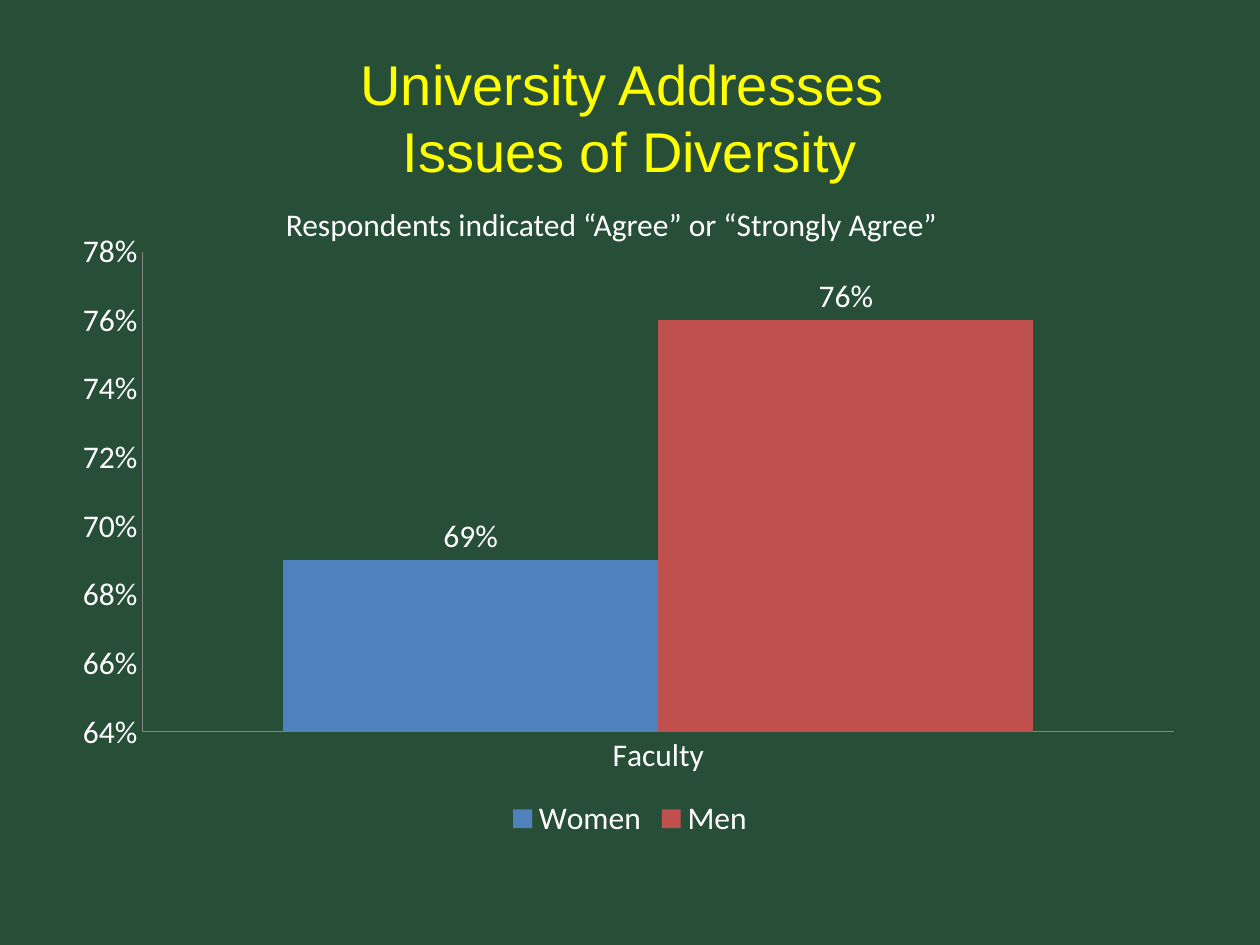
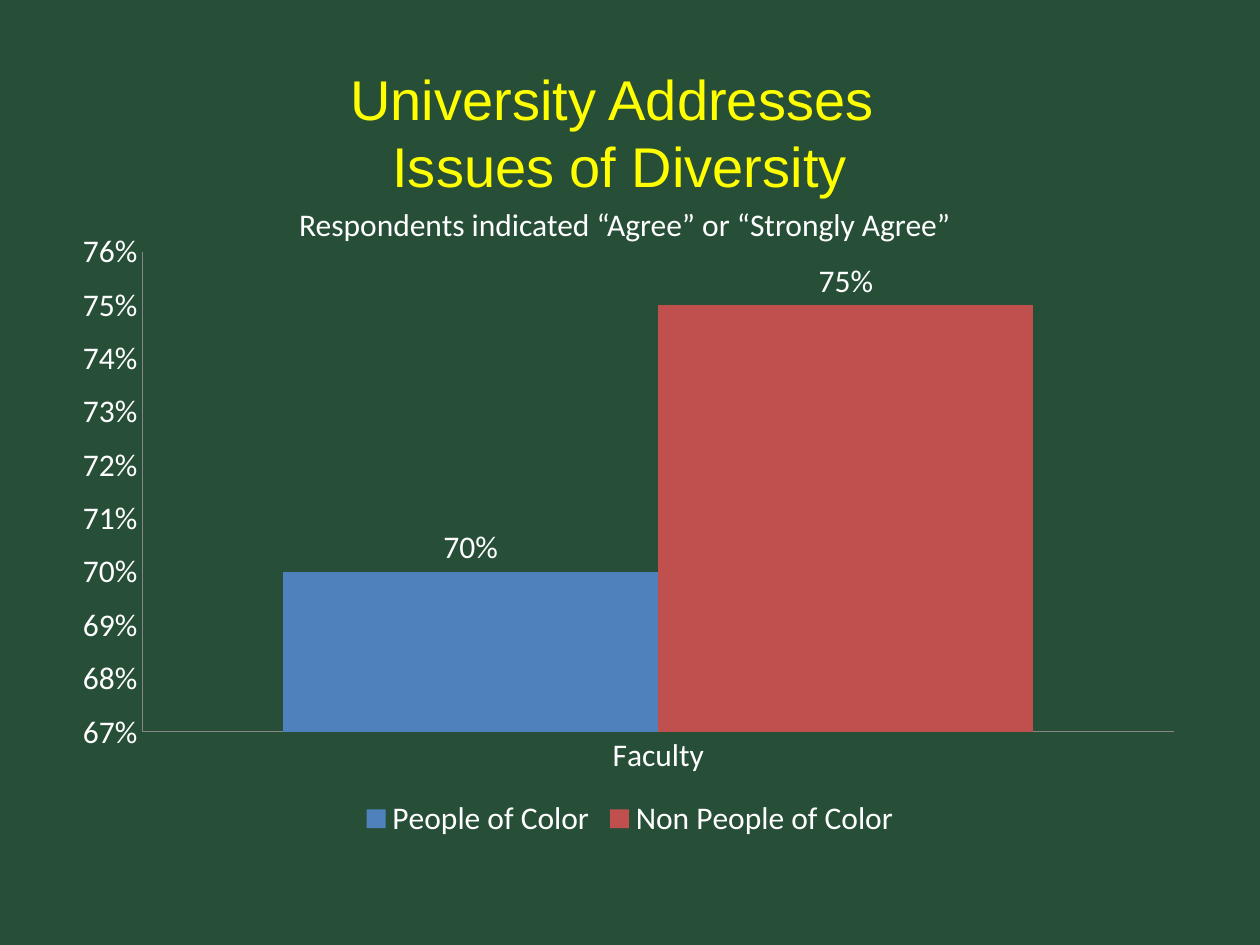
from copy import deepcopy
from dataclasses import dataclass

from lxml import etree
from pptx import Presentation
from pptx.chart.axis import CategoryAxis, ValueAxis
from pptx.chart.chart import Chart
from pptx.chart.data import CategoryChartData
from pptx.dml.color import RGBColor
from pptx.enum.chart import (XL_CHART_TYPE, XL_LABEL_POSITION,
                             XL_LEGEND_POSITION, XL_TICK_MARK)
from pptx.enum.text import MSO_ANCHOR, MSO_AUTO_SIZE, PP_ALIGN
from pptx.oxml import parse_xml
from pptx.oxml.ns import nsdecls, qn
from pptx.slide import Slide
from pptx.text.text import Font
from pptx.util import Pt

COLUMNS = XL_CHART_TYPE.COLUMN_CLUSTERED
OUTSIDE_END = XL_LABEL_POSITION.OUTSIDE_END
LEGEND_BOTTOM = XL_LEGEND_POSITION.BOTTOM
NO_TICK = XL_TICK_MARK.NONE
MIDDLE = MSO_ANCHOR.MIDDLE
GROW = MSO_AUTO_SIZE.SHAPE_TO_FIT_TEXT
LEFT, CENTER = PP_ALIGN.LEFT, PP_ALIGN.CENTER

# Shared look
GREEN, YELLOW, WHITE, GRAY = "274E37", "FFFF00", "FFFFFF", "868686"
SERIES_COLORS = ("4F81BD", "C0504D")
TITLE_FONT, BODY_FONT = "Arial", "Calibri"
TITLE_SIZE, BODY_SIZE = 32, 18
PERCENT = "0%"
TITLE = "University Addresses \vIssues of Diversity"
SUBTITLE = "Respondents indicated “Agree” or “Strongly Agree”"
TITLE_ONLY_LAYOUT = 5


@dataclass(frozen=True)
class Frame:
    left: float
    top: float
    width: float
    height: float

    def lengths(self) -> tuple[Pt, Pt, Pt, Pt]:
        return Pt(self.left), Pt(self.top), Pt(self.width), Pt(self.height)


@dataclass(frozen=True)
class SurveyPage:
    title_frame: Frame
    subtitle_frame: Frame
    subtitle_align: PP_ALIGN
    results: dict[str, float]
    axis_range: tuple[float, float]
    axis_step: float


CHART_FRAME = Frame(36, 126, 648, 356.4)
# Plot area as fractions of the chart frame
PLOT_AREA = {"x": 0.07, "y": 0.05, "w": 0.91, "h": 0.77}

PAGES = (
    SurveyPage(Frame(36, 21.6, 648, 90), Frame(156.24, 113.76, 419.76, 51.12),
               LEFT, {"Women": 0.69, "Men": 0.76}, (0.64, 0.78), 0.02),
    SurveyPage(Frame(30.24, 30.24, 648, 90), Frame(138.24, 113.76, 437.76, 30.24),
               CENTER, {"People of Color": 0.7, "Non People of Color": 0.75},
               (0.67, 0.76), 0.01),
)


def rgb(color: str) -> RGBColor:
    return RGBColor.from_string(color)


def style_font(font: Font, name: str, size: float, color: str) -> None:
    font.name = name
    font.size = Pt(size)
    font.color.rgb = rgb(color)


def add_title(page: Slide, frame: Frame) -> None:
    title = page.shapes.title
    title.left, title.top, title.width, title.height = frame.lengths()
    title.text_frame.text = TITLE
    title.text_frame.vertical_anchor = MIDDLE
    para = title.text_frame.paragraphs[0]
    para.alignment = CENTER
    for span in para.runs:
        style_font(span.font, TITLE_FONT, TITLE_SIZE, YELLOW)
    # The line break takes the size of the text, in the theme font
    properties = deepcopy(para.runs[0].font._element)
    properties.remove(properties.find(qn("a:latin")))
    para._p.find(qn("a:br")).append(properties)


def add_subtitle(page: Slide, frame: Frame, align: PP_ALIGN) -> None:
    box = page.shapes.add_textbox(*frame.lengths())
    box.text_frame.word_wrap = True
    box.text_frame.auto_size = GROW
    box.text_frame.text = SUBTITLE
    para = box.text_frame.paragraphs[0]
    para.alignment = align
    style_font(para.runs[0].font, BODY_FONT, BODY_SIZE, WHITE)


def style_axis(axis: CategoryAxis | ValueAxis) -> None:
    axis.has_major_gridlines = False
    axis.major_tick_mark = axis.minor_tick_mark = NO_TICK
    axis.format.line.color.rgb = rgb(GRAY)
    axis.format.line.width = Pt(0.75)
    style_font(axis.tick_labels.font, BODY_FONT, BODY_SIZE, WHITE)


def place_plot_area(chart: Chart) -> None:
    plot_area = chart._chartSpace.chart.plotArea
    for old_layout in plot_area.findall(qn("c:layout")):
        plot_area.remove(old_layout)
    layout = parse_xml(f"<c:layout {nsdecls('c')}><c:manualLayout/></c:layout>")
    settings = {"layoutTarget": "inner", "xMode": "edge", "yMode": "edge", **PLOT_AREA}
    for name, value in settings.items():
        etree.SubElement(layout[0], qn(f"c:{name}")).set("val", str(value))
    plot_area.insert(0, layout)


def add_results_chart(page: Slide, survey: SurveyPage) -> None:
    data = CategoryChartData(number_format=PERCENT)
    data.categories = ["Faculty"]
    for group, share in survey.results.items():
        data.add_series(group, [share])
    chart = page.shapes.add_chart(COLUMNS, *CHART_FRAME.lengths(), data).chart
    style_font(chart.font, BODY_FONT, BODY_SIZE, WHITE)
    chart.has_title = False
    place_plot_area(chart)

    # Axes
    style_axis(chart.category_axis)
    style_axis(chart.value_axis)
    chart.value_axis.minimum_scale, chart.value_axis.maximum_scale = survey.axis_range
    chart.value_axis.major_unit = survey.axis_step
    chart.value_axis.tick_labels.number_format = PERCENT
    chart.value_axis.tick_labels.number_format_is_linked = False

    # Legend
    chart.has_legend = True
    chart.legend.position = LEGEND_BOTTOM
    chart.legend.include_in_layout = False
    style_font(chart.legend.font, BODY_FONT, BODY_SIZE, WHITE)

    # Columns and their labels
    plot = chart.plots[0]
    plot.gap_width = 75
    plot.vary_by_categories = False
    for series, color in zip(plot.series, SERIES_COLORS):
        series.format.fill.solid()
        series.format.fill.fore_color.rgb = rgb(color)
        labels = series.data_labels
        labels.show_value = True
        labels.position = OUTSIDE_END
        labels.number_format = PERCENT
        labels.number_format_is_linked = False
        style_font(labels.font, BODY_FONT, BODY_SIZE, WHITE)


def main() -> None:
    deck = Presentation()
    deck.slide_width, deck.slide_height = Pt(720), Pt(540)
    background = deck.slide_master.background.fill
    background.solid()
    background.fore_color.rgb = rgb(GREEN)
    for survey in PAGES:
        page = deck.slides.add_slide(deck.slide_layouts[TITLE_ONLY_LAYOUT])
        add_title(page, survey.title_frame)
        add_subtitle(page, survey.subtitle_frame, survey.subtitle_align)
        add_results_chart(page, survey)
    deck.save("out.pptx")


if __name__ == "__main__":
    main()
